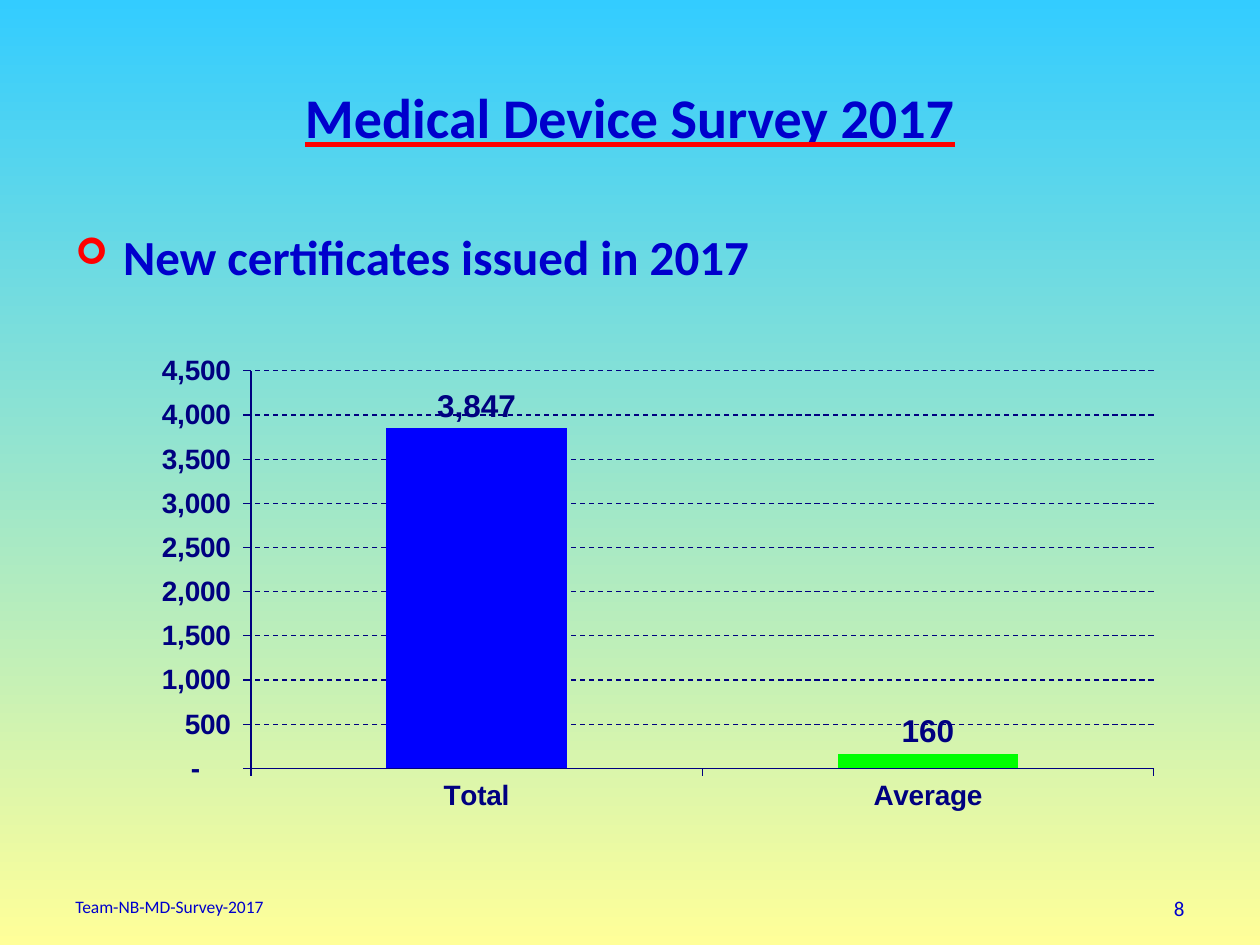
from lxml import etree
from pptx import Presentation
from pptx.chart.data import CategoryChartData as ChartData
from pptx.dml.color import RGBColor
from pptx.enum.chart import XL_CHART_TYPE as ChartType
from pptx.enum.chart import XL_LABEL_POSITION as LabelPosition
from pptx.enum.chart import XL_TICK_MARK as TickMark
from pptx.enum.dml import MSO_LINE_DASH_STYLE as Dash
from pptx.enum.text import MSO_ANCHOR as Anchor
from pptx.enum.text import PP_ALIGN as Align
from pptx.oxml import parse_xml
from pptx.oxml.ns import nsdecls, qn
from pptx.util import Inches, Pt


def color(hex_string):
    return RGBColor.from_string(hex_string)


class SurveyPage:
    """Style and current slide; places are percentages of the slide's size."""

    text_font, chart_font = "Calibri", "Arial"
    text_color, accent, axis_color = "0000CC", "FF0000", "000080"
    number_format = '_ * #,##0_ ;_ * \\-#,##0_ ;_ * "-"??_ ;_ '

    def __init__(self, deck):
        self.deck = deck
        self.page = deck.slides.add_slide(deck.slide_layouts[6])

    def place(self, left, top, width, height):
        across, down = self.deck.slide_width / 100, self.deck.slide_height / 100
        return [round(v) for v in (left * across, top * down, width * across, height * down)]

    def background(self, top, bottom):
        fill = self.page.background.fill
        fill.gradient()
        fill.gradient_angle = 270
        for stop, hex_string in zip(fill.gradient_stops, (top, bottom)):
            stop.color.rgb = color(hex_string)

    def text(self, at, words, size, bold=False, align=Align.LEFT,
             anchor=Anchor.TOP, bullet=None, underline=False):
        box = self.page.shapes.add_textbox(*self.place(*at))
        frame = box.text_frame
        frame.word_wrap = True
        frame.vertical_anchor = anchor
        para = frame.paragraphs[0]
        para.alignment = align
        if bullet:
            self.add_bullet(para, bullet)
        span = para.add_run()
        span.text = words
        self.style(span.font, size, self.text_color, bold, self.text_font)
        if underline:
            self.add_underline(span)

    def style(self, font, size, hex_string, bold, name):
        font.size, font.bold, font.name = Pt(size), bold, name
        font.color.rgb = color(hex_string)

    def add_bullet(self, para, symbol):
        props = para._p.get_or_add_pPr()
        props.set("marL", str(Inches(0.38)))
        props.set("indent", str(-Inches(0.38)))
        size = etree.SubElement(props, qn("a:buSzPct"), val="75000")
        size.addprevious(parse_xml(
            f'<a:buClr {nsdecls("a")}><a:srgbClr val="{self.accent}"/></a:buClr>'))
        etree.SubElement(props, qn("a:buFont"), typeface="Wingdings")
        etree.SubElement(props, qn("a:buChar"), char=symbol)

    def add_underline(self, span):
        span.font.underline = True
        fill = span._r.rPr.find(qn("a:solidFill"))
        fill.addnext(parse_xml(
            f'<a:uFill {nsdecls("a")}><a:solidFill><a:srgbClr val="{self.accent}"/>'
            '</a:solidFill></a:uFill>'))

    def column_chart(self, at, columns, plot_area):
        data = ChartData()
        data.categories = [name for name, _, _ in columns]
        data.add_series("Series 1", [value for _, value, _ in columns])
        chart = self.page.shapes.add_chart(
            ChartType.COLUMN_CLUSTERED, *self.place(*at), data).chart
        chart.has_legend = chart.has_title = False
        self.style(chart.font, 10, "000000", False, self.chart_font)

        # Columns, each with its own colour and value
        plot = chart.plots[0]
        plot.gap_width, plot.vary_by_categories = 150, False
        series = plot.series[0]
        series.invert_if_negative = False
        for index, (_, _, hex_string) in enumerate(columns):
            fill = series.points[index].format.fill
            fill.solid()
            fill.fore_color.rgb = color(hex_string)
        plot.has_data_labels = True
        labels = plot.data_labels
        labels.show_value, labels.position = True, LabelPosition.OUTSIDE_END
        labels.number_format, labels.number_format_is_linked = self.number_format, False
        self.style(labels.font, 18, self.axis_color, True, self.chart_font)

        # Axes and gridlines
        values = chart.value_axis
        values.minimum_scale, values.maximum_scale, values.major_unit = 0, 4500, 500
        values.has_major_gridlines = True
        for axis in (chart.category_axis, values):
            axis.major_tick_mark = TickMark.OUTSIDE
            self.style(axis.tick_labels.font, 16, self.axis_color, True, self.chart_font)
            self.line(axis.format.line)
        values.tick_labels.number_format = self.number_format
        values.tick_labels.number_format_is_linked = False
        grid = values.major_gridlines.format.line
        self.line(grid)
        grid.dash_style = Dash.DASH
        self.set_plot_area(chart, plot_area)

    def line(self, line):
        line.color.rgb = color(self.axis_color)
        line.width = Pt(0.75)

    def set_plot_area(self, chart, shares):
        area = chart._chartSpace.chart.plotArea
        for old in area.findall(qn("c:layout")):
            area.remove(old)
        layout = etree.Element(qn("c:layout"))
        manual = etree.SubElement(layout, qn("c:manualLayout"))
        settings = [("layoutTarget", "inner"), ("xMode", "edge"), ("yMode", "edge")]
        for tag, value in settings + list(zip("xywh", shares)):
            etree.SubElement(manual, qn(f"c:{tag}"), val=str(value))
        area.insert(0, layout)


def main():
    deck = Presentation()
    deck.slide_width, deck.slide_height = Inches(10), Inches(7.5)
    survey = SurveyPage(deck)
    survey.background("33CCFF", "FFFF99")

    # Title and bullet
    survey.text((5, 4, 90, 16.67), "Medical Device Survey 2017", 32, bold=True,
                align=Align.CENTER, anchor=Anchor.MIDDLE, underline=True)
    survey.text((5, 23.33, 90, 10.93), "New certificates issued in 2017", 28,
                bold=True, bullet="➢")

    # Certificates chart
    survey.column_chart((9.8, 29.2, 84.3, 62.8),
                        [("Total", 3847, "0000FF"), ("Average", 160, "00FF00")],
                        plot_area=(0.12, 0.16, 0.85, 0.67))

    # Footer and page number
    survey.text((5, 94.13, 31.7, 3.87), "Team-NB-MD-Survey-2017", 10)
    survey.text((71.7, 94.13, 23.3, 3.87), "8", 12, align=Align.RIGHT)
    deck.save("out.pptx")


if __name__ == "__main__":
    main()
